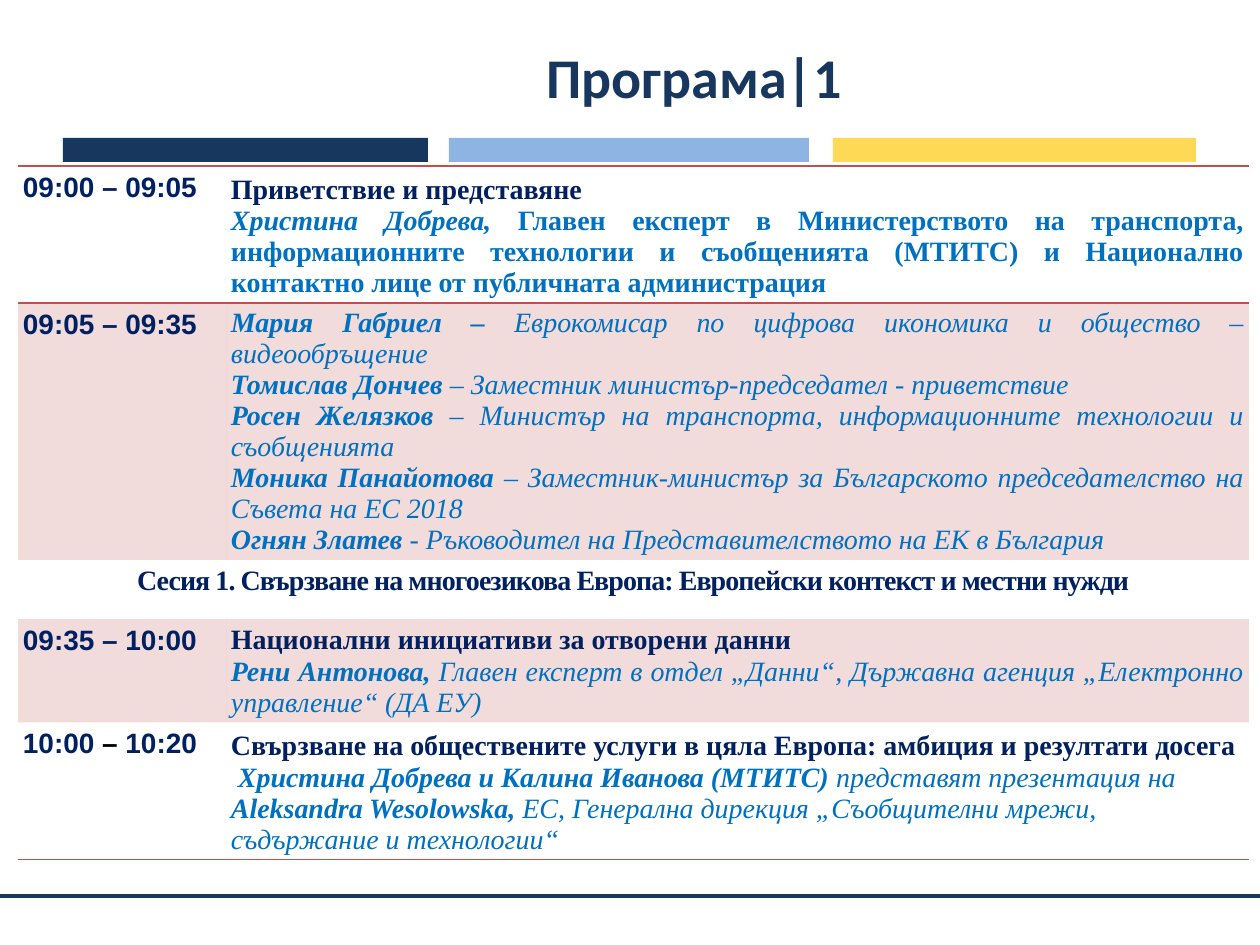
from lxml import etree
from pptx import Presentation
from pptx.dml.color import RGBColor
from pptx.enum.shapes import MSO_CONNECTOR as Conn, MSO_SHAPE as Shape
from pptx.enum.text import MSO_ANCHOR as Anchor, PP_ALIGN as Align
from pptx.oxml.ns import qn
from pptx.util import Pt

NAVY = RGBColor(0x17, 0x37, 0x5E)
SKY = RGBColor(0x8E, 0xB4, 0xE3)
GOLD = RGBColor(0xFE, 0xD9, 0x56)
INK = RGBColor(0x00, 0x20, 0x60)
BLUE = RGBColor(0x00, 0x70, 0xC0)
BLACK = RGBColor(0, 0, 0)
RED = RGBColor(0xC0, 0x50, 0x4D)
SERIF, SANS = "Times New Roman", "Arial"
NO_GRID = "{2D5ABB26-0587-4C30-8999-92F81FD0307C}"


def px(n):
    return round(n * 914400 / 126)


def head(text):
    return (text, INK, "b")


def name(text):
    return (text, BLUE, "bi")


def role(text):
    return (text, BLUE, "i")


def add_bar(slide, left, width, color):
    bar = slide.shapes.add_shape(Shape.RECTANGLE, px(left), px(138), px(width), px(24))
    bar.shadow.inherit = False
    bar.fill.solid()
    bar.fill.fore_color.rgb = color
    bar.line.fill.background()


def add_rule(slide, y):
    rule = slide.shapes.add_connector(Conn.STRAIGHT, px(1260), px(y), 0, px(y))
    rule.line.color.rgb = NAVY
    rule.line.width = Pt(2.25)
    etree.SubElement(rule.element.spPr, qn("a:effectLst"))


def set_title(slide, text):
    title = slide.shapes.title
    title.left, title.top, title.width, title.height = map(px, (297, 18, 795, 116))
    frame = title.text_frame
    frame.margin_left = frame.margin_right = frame.margin_top = frame.margin_bottom = 0
    frame.vertical_anchor = Anchor.MIDDLE
    para = frame.paragraphs[0]
    para.alignment = Align.CENTER
    add_run(para, (text, NAVY, "b"), "Calibri", 32)


def add_run(para, part, face, size=16):
    """Add one (text, color, marks) part; marks holds b and i."""
    text, color, marks = part
    run = para.add_run()
    run.text = text
    font = run.font
    font.name, font.size, font.color.rgb = face, Pt(size), color
    font.bold, font.italic = "b" in marks, "i" in marks
    return run


def add_edge(cell, tag):
    edge = etree.SubElement(cell._tc.get_or_add_tcPr(), qn(tag), w=str(Pt(1)))
    fill = etree.SubElement(edge, qn("a:solidFill"))
    etree.SubElement(fill, qn("a:srgbClr"), val=str(RED))


def paint(cell, tinted):
    if not tinted:
        cell.fill.background()
        return
    cell.fill.solid()
    cell.fill.fore_color.rgb = RED
    color = cell._tc.tcPr.find(".//" + qn("a:srgbClr"))
    etree.SubElement(color, qn("a:alpha"), val="20000")


def fill_cell(cell, paras, face, edges="", tinted=False):
    """Write (alignment, line spacing, parts) paragraphs and style the cell."""
    cell.margin_left = cell.margin_right = px(5)
    cell.margin_top = cell.margin_bottom = px(4)
    for side in edges:
        add_edge(cell, "a:ln" + side)
    paint(cell, tinted)
    frame = cell.text_frame
    for i, (align, space, parts) in enumerate(paras):
        para = frame.add_paragraph() if i else frame.paragraphs[0]
        para.alignment, para.line_spacing = align, space
        for part in parts:
            add_run(para, part, face)


def add_table(slide, rows):
    heights = (135, 256, 59, 102, 135)
    frame = slide.shapes.add_table(len(rows), 2, px(18), px(166), px(1231), px(sum(heights)))
    table = frame.table
    table.first_row = table.horz_banding = False
    frame.element.find(".//" + qn("a:tableStyleId")).text = NO_GRID
    for col, width in zip(table.columns, (208, 1023)):
        col.width = px(width)
    for i, (height, (time, paras, edges, tinted)) in enumerate(zip(heights, rows)):
        table.rows[i].height = px(height)
        left, right = table.cell(i, 0), table.cell(i, 1)
        if time:
            fill_cell(left, [(Align.LEFT, 1.07, time)], SANS, edges, tinted)
            fill_cell(right, paras, SERIF, edges, tinted)
        else:
            left.merge(right)
            fill_cell(left, paras, SERIF, edges, tinted)
            for run in left.text_frame.paragraphs[0].runs:
                run.font._element.set("spc", "-50")


def main():
    deck = Presentation()
    deck.slide_width, deck.slide_height = px(1260), px(945)
    slide = deck.slides.add_slide(deck.slide_layouts[5])

    for left, width, color in ((63, 365, NAVY), (449, 360, SKY), (833, 363, GOLD)):
        add_bar(slide, left, width, color)
    add_rule(slide, 896)
    set_title(slide, "Програма|1")

    just, start = Align.JUSTIFY, Align.LEFT
    guests = (
        ("Мария Габриел – ", "Еврокомисар по цифрова икономика и общество – видеообръщение"),
        ("Томислав Дончев ", "– Заместник министър-председател - приветствие"),
        ("Росен Желязков ", "– Министър на транспорта, информационните технологии и съобщенията"),
        ("Моника Панайотова ", "– Заместник-министър за Българското председателство на Съвета на ЕС 2018"),
        ("Огнян Златев ", "- Ръководител на Представителството на ЕК в България"),
    )
    welcome = [
        (just, 1.15, [head("Приветствие и представяне")]),
        (just, 1.0, [
            name("Христина Добрева, "),
            ("Главен експерт в Министерството на транспорта, информационните технологии и "
             "съобщенията (МТИТС) и Национално контактно лице от публичната администрация",
             BLUE, "b"),
        ]),
    ]
    speech = [(just, 1.0, [name(who), role(what)]) for who, what in guests]
    session = [(Align.CENTER, 1.07, [
        head("Сесия 1. Свързване на многоезикова Европа: Европейски контекст и местни нужди"),
    ])]
    data = [
        (start, 1.07, [head("Национални инициативи за отворени данни")]),
        (just, 1.0, [
            name("Рени Антонова, "),
            role("Главен експерт в отдел „Данни“, Държавна агенция „Електронно управление“ (ДА ЕУ)"),
        ]),
    ]
    service = [
        (just, 1.15, [
            head("Свързване на обществените услуги в цяла Европа: амбиция и резултати досега"),
        ]),
        (start, 1.0, [
            (" ", BLACK, "i"),
            name("Христина Добрева и Калина Иванова (МТИТС) "),
            role("представят презентация на "),
            name("Aleksandra Wesolowska, "),
            role("EC, Генерална дирекция „Съобщителни мрежи, съдържание и технологии“"),
        ]),
    ]
    add_table(slide, [
        ([head("09:00 – 09:05")], welcome, "TB", False),
        ([head("09:05 – 09:35")], speech, "", True),
        (None, session, "", False),
        ([head("09:35 – 10:00")], data, "", True),
        ([head("10:00 "), ("– ", BLACK, "b"), head("10:20")], service, "B", False),
    ])
    deck.save("out.pptx")


if __name__ == "__main__":
    main()
